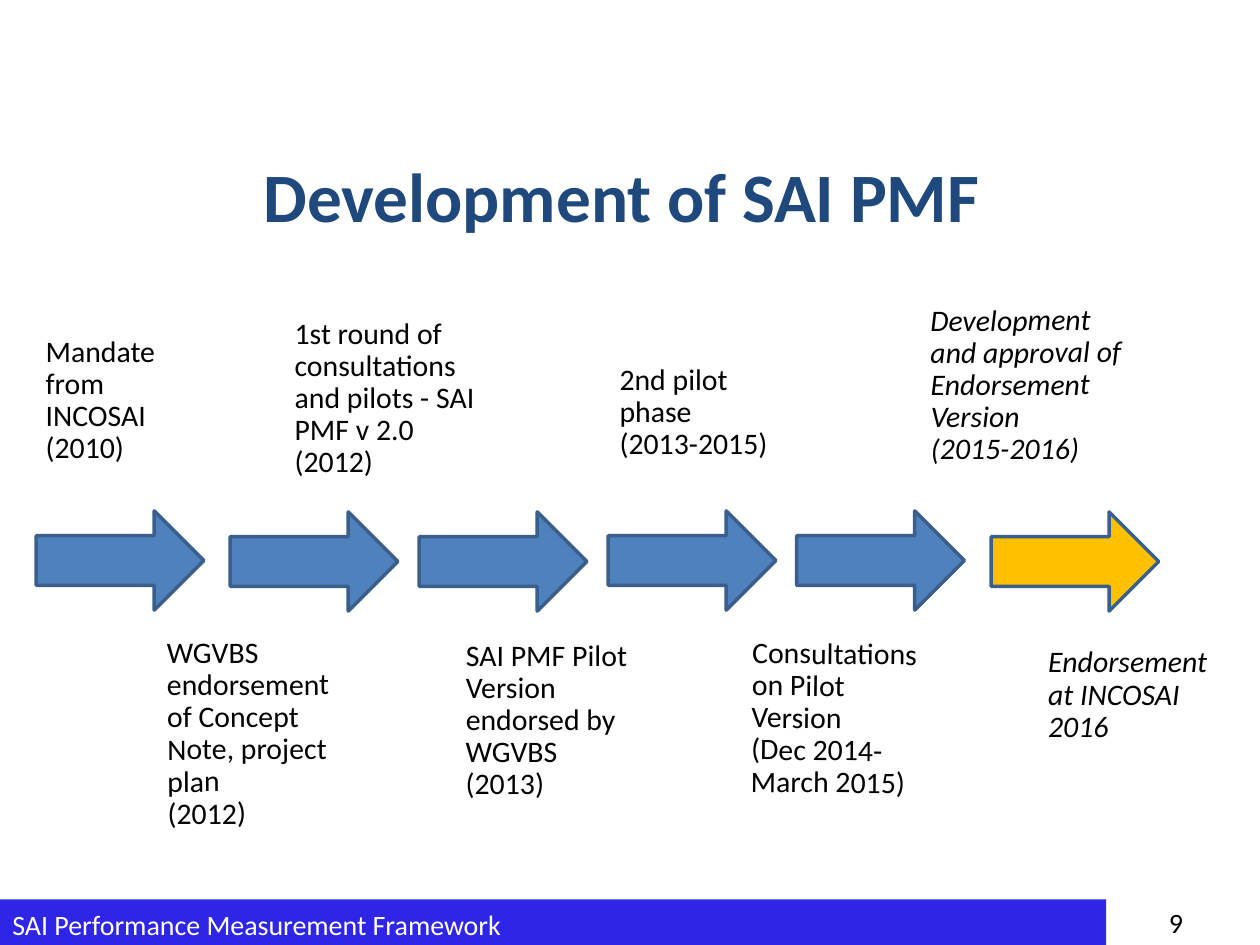
from pptx import Presentation
from pptx.dml.color import RGBColor
from pptx.enum.shapes import MSO_SHAPE
from pptx.enum.text import MSO_ANCHOR, PP_ALIGN
from pptx.util import Cm, Pt


def color(hex_value):
    return RGBColor.from_string(hex_value)


def write_text(shape, text, alignment=PP_ALIGN.LEFT, anchor=MSO_ANCHOR.MIDDLE,
               font_color="000000", **font_format):
    frame = shape.text_frame
    frame.word_wrap = True
    frame.vertical_anchor = anchor
    paragraph = frame.paragraphs[0]
    paragraph.text = text
    paragraph.alignment = alignment
    paragraph.font.name = "Calibri"
    paragraph.font.color.rgb = color(font_color)
    for name, value in font_format.items():
        setattr(paragraph.font, name, value)
    return paragraph


presentation = Presentation()
presentation.slide_width = Cm(25.4)
presentation.slide_height = Cm(19.05)
slide = presentation.slides.add_slide(presentation.slide_layouts[6])
shapes = slide.shapes

# Footer bar and slide number
footer = shapes.add_shape(MSO_SHAPE.RECTANGLE, Cm(0), Cm(18.13), Cm(22.3), Cm(1))
footer.shadow.inherit = False
footer.fill.solid()
footer.fill.fore_color.rgb = color("2E25E7")
footer.line.fill.background()
write_text(footer, "SAI Performance Measurement Framework",
           font_color="FFFFFF", size=Pt(16))
number = shapes.add_textbox(Cm(22.3), Cm(18.13), Cm(1.8), Cm(0.92))
write_text(number, "9", PP_ALIGN.RIGHT, MSO_ANCHOR.TOP, size=Pt(16))

# Title
title = shapes.add_textbox(Cm(1.1), Cm(3.12), Cm(22.86), Cm(1.6))
write_text(title, "Development of SAI PMF", PP_ALIGN.CENTER,
           font_color="1F497D", size=Pt(39.6), bold=True)

# Milestone labels: left, top, width, height, rotation, italic, text
milestones = [
    (3.29, 13.98, 3.45, 1.63, -0.3, False,
     "WGVBS endorsement of Concept Note, project plan\v(2012)"),
    (0.84, 7.27, 3.35, 1.63, 0, False, "Mandate from INCOSAI (2010)"),
    (5.86, 7.23, 4.04, 1.63, 0, False,
     "1st round of consultations and pilots - SAI PMF v 2.0\v(2012)"),
    (9.31, 13.72, 3.4, 1.63, 0.1, False,
     "SAI PMF Pilot Version endorsed by WGVBS (2013)"),
    (12.41, 7.51, 3.35, 1.63, 0, False, "2nd pilot phase\v(2013-2015)"),
    (15.07, 13.68, 3.71, 1.63, 0.6, False,
     "Consultations on Pilot Version\v(Dec 2014-March 2015)"),
    (18.68, 6.96, 3.94, 1.63, -0.3, True,
     "Development and approval of Endorsement Version\v(2015-2016)"),
    (21.05, 13.08, 3.4, 1.88, 0, True, "Endorsement at INCOSAI 2016"),
]
label_margins = {"margin_left": Cm(0.08), "margin_top": 0,
                 "margin_right": 0, "margin_bottom": 0}
for left, top, width, height, rotation, italic, text in milestones:
    label = shapes.add_textbox(Cm(left), Cm(top), Cm(width), Cm(height))
    label.rotation = rotation
    for name, value in label_margins.items():
        setattr(label.text_frame, name, value)
    paragraph = write_text(label, text, size=Pt(17), italic=italic)
    paragraph.line_spacing = 0.9

# Timeline arrows, the last one highlighted
arrow_positions = [(0.73, 10.3), (4.64, 10.32), (8.45, 10.32),
                   (12.26, 10.3), (16.06, 10.3), (19.98, 10.32)]
for position in arrow_positions:
    left, top = position
    arrow = shapes.add_shape(MSO_SHAPE.RIGHT_ARROW, Cm(left), Cm(top), Cm(3.38), Cm(2))
    arrow.shadow.inherit = False
    arrow.fill.solid()
    arrow.fill.fore_color.rgb = color(
        "FFC000" if position == arrow_positions[-1] else "4F81BD")
    arrow.line.color.rgb = color("3A5F8C")
    arrow.line.width = Pt(2)

presentation.save("out.pptx")
